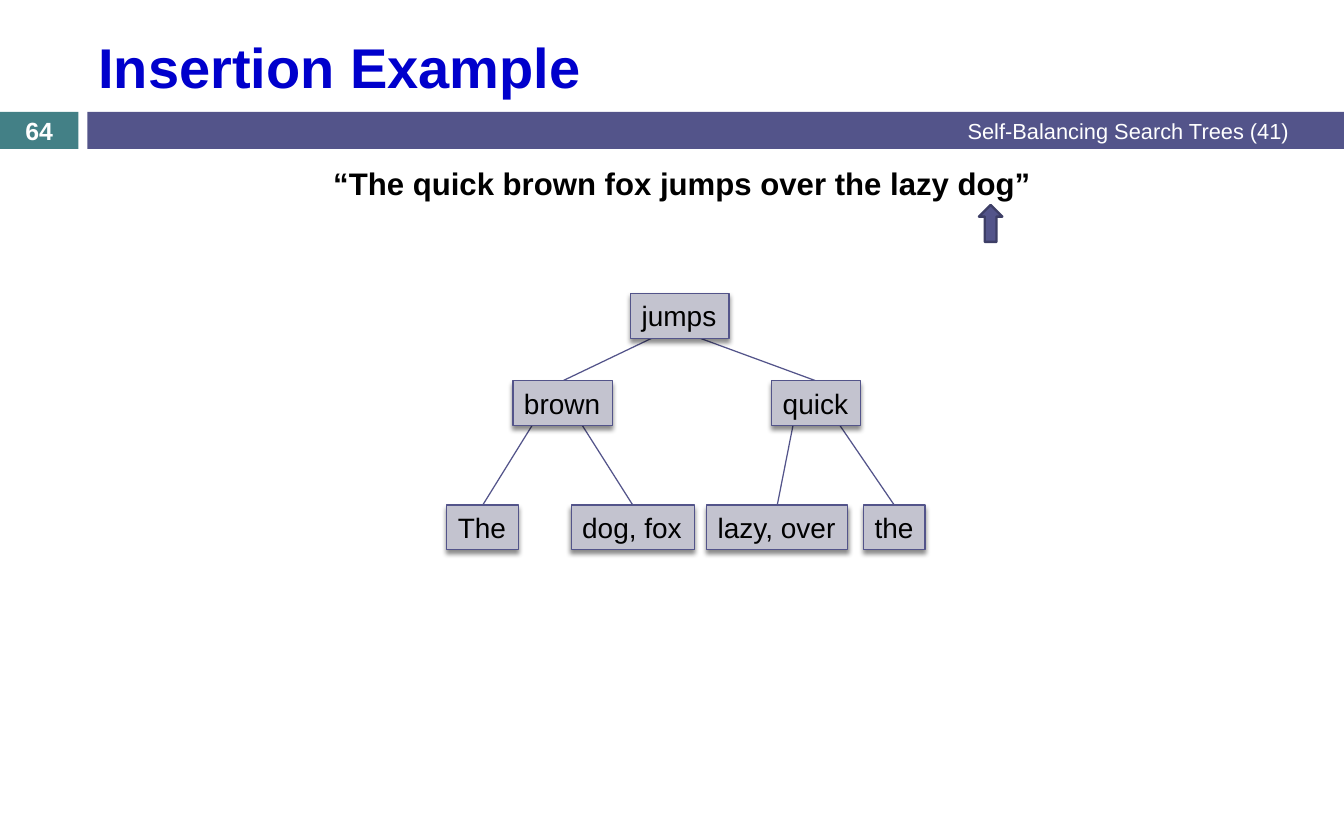
from lxml import etree
from pptx import Presentation
from pptx.dml.color import RGBColor
from pptx.enum.shapes import MSO_CONNECTOR, MSO_SHAPE
from pptx.enum.text import MSO_ANCHOR, PP_ALIGN
from pptx.oxml import parse_xml
from pptx.oxml.ns import nsdecls, qn
from pptx.util import Inches, Pt

RECTANGLE, UP_ARROW = MSO_SHAPE.RECTANGLE, MSO_SHAPE.UP_ARROW
STRAIGHT = MSO_CONNECTOR.STRAIGHT
TOP, MIDDLE = MSO_ANCHOR.TOP, MSO_ANCHOR.MIDDLE
LEFT, CENTER, RIGHT = PP_ALIGN.LEFT, PP_ALIGN.CENTER, PP_ALIGN.RIGHT

BLACK = RGBColor(0x00, 0x00, 0x00)
WHITE = RGBColor(0xFF, 0xFF, 0xFF)
BLUE = RGBColor(0x00, 0x00, 0xCC)
TEAL = RGBColor(0x43, 0x80, 0x86)
INDIGO = RGBColor(0x53, 0x54, 0x8A)
DARK_INDIGO = RGBColor(0x3D, 0x3E, 0x66)
NODE_GRAY = RGBColor(0xC3, 0xC3, 0xCF)

NODE_HEIGHT = 0.4
LEVEL_TOPS = (0, 0.78, 1.89)
NODES = {
    "jumps": (0, 1.64, 0.88),
    "brown": (1, 0.59, 0.89),
    "quick": (1, 2.9, 0.79),
    "The": (2, 0, 0.64),
    "dog, fox": (2, 1.11, 1.1),
    "lazy, over": (2, 2.32, 1.26),
    "the": (2, 3.72, 0.55),
}
EDGES = (
    ("jumps", 0.19, "brown"),
    ("jumps", 0.62, "quick"),
    ("brown", 0.17, "The"),
    ("brown", 0.62, "dog, fox"),
    ("quick", 0.19, "lazy, over"),
    ("quick", 0.61, "the"),
)


def write_text(shape, text, size, color, bold=False, align=LEFT, anchor=MIDDLE, wrap=True):
    """Write one formatted paragraph into a shape."""
    frame = shape.text_frame
    frame.word_wrap, frame.vertical_anchor = wrap, anchor
    paragraph = frame.paragraphs[0]
    paragraph.alignment = align
    run = paragraph.add_run()
    run.text = text
    for name, value in {"name": "Arial", "size": Pt(size), "bold": bold}.items():
        setattr(run.font, name, value)
    run.font.color.rgb = color
    return paragraph


def add_text(slide, box, text, size, color, **formats):
    """Add a text box and return its paragraph."""
    return write_text(slide.shapes.add_textbox(*map(Inches, box)), text, size, color, **formats)


def add_filled(slide, preset, box, fill, line=None, width=0.79):
    """Add a preset shape with a flat fill and an optional outline."""
    shape = slide.shapes.add_shape(preset, *map(Inches, box))
    shape.shadow.inherit = False
    shape.fill.solid()
    shape.fill.fore_color.rgb = fill
    if line is None:
        shape.line.fill.background()
    else:
        shape.line.color.rgb, shape.line.width = line, Pt(width)
    return shape


def add_shadow(shape):
    """Give a shape a soft shadow below it."""
    effects = shape._element.spPr.find(qn("a:effectLst"))
    effects.append(parse_xml(
        f'<a:outerShdw {nsdecls("a")} blurRad="{Pt(3)}" dist="{Pt(2.4)}" dir="5400000" '
        'rotWithShape="0"><a:srgbClr val="000000"><a:alpha val="45000"/></a:srgbClr>'
        '</a:outerShdw>'))


def add_header(slide, left, top, width):
    """Place the title above the number block and the chapter bar."""
    number_box = (left, top + 1, 0.7, 0.33)
    bar_left = left + 0.78
    add_filled(slide, RECTANGLE, number_box, TEAL)
    add_filled(slide, RECTANGLE, (bar_left, top + 1, width - 0.78, 0.33), INDIGO)
    add_text(slide, (left + 4.5, top + 0.99, 7.11, 0.35),
             "Self-Balancing Search Trees (41)", 14, WHITE, align=RIGHT)
    add_text(slide, number_box, "64", 16, WHITE, bold=True, align=CENTER)
    add_text(slide, (bar_left, top + 0.19, 10.7, 0.8), "Insertion Example", 36, BLUE, bold=True)


def add_sentence(slide, left, top, width, height):
    """Place the sentence and the arrow under its current word."""
    paragraph = add_text(slide, (left, top, width, height),
                         "“The quick brown fox jumps over the lazy dog” ", 20, BLACK,
                         bold=True, align=CENTER, anchor=TOP)
    paragraph.space_before = Pt(7)
    add_filled(slide, UP_ARROW, (left + 7.07, top + 0.41, 0.21, 0.33), INDIGO, DARK_INDIGO, 1.5)


def add_tree(slide, left, top):
    """Place the search tree, its edges behind its nodes."""
    for parent, offset, child in EDGES:
        parent_level, parent_left, _ = NODES[parent]
        child_level, child_left, child_width = NODES[child]
        ends = (left + parent_left + offset, top + LEVEL_TOPS[parent_level] + NODE_HEIGHT,
                left + child_left + child_width / 2, top + LEVEL_TOPS[child_level])
        edge = slide.shapes.add_connector(STRAIGHT, *map(Inches, ends))
        edge.line.color.rgb, edge.line.width = INDIGO, Pt(0.79)
        etree.SubElement(edge._element.spPr, qn("a:effectLst"))
    for word, (level, node_left, width) in NODES.items():
        box = (left + node_left, top + LEVEL_TOPS[level], width, NODE_HEIGHT)
        node = add_filled(slide, RECTANGLE, box, NODE_GRAY, INDIGO)
        add_shadow(node)
        write_text(node, word, 18, BLACK, anchor=TOP, wrap=False)


def main():
    """Build and save the presentation."""
    presentation = Presentation()
    presentation.slide_width, presentation.slide_height = Inches(12), Inches(7.5)
    slide = presentation.slides.add_slide(presentation.slide_layouts[6])
    add_header(slide, 0, 0, 12)
    add_tree(slide, 3.99, 2.62)
    add_sentence(slide, 1.67, 1.42, 8.92, 0.5)
    presentation.save("out.pptx")


if __name__ == "__main__":
    main()
